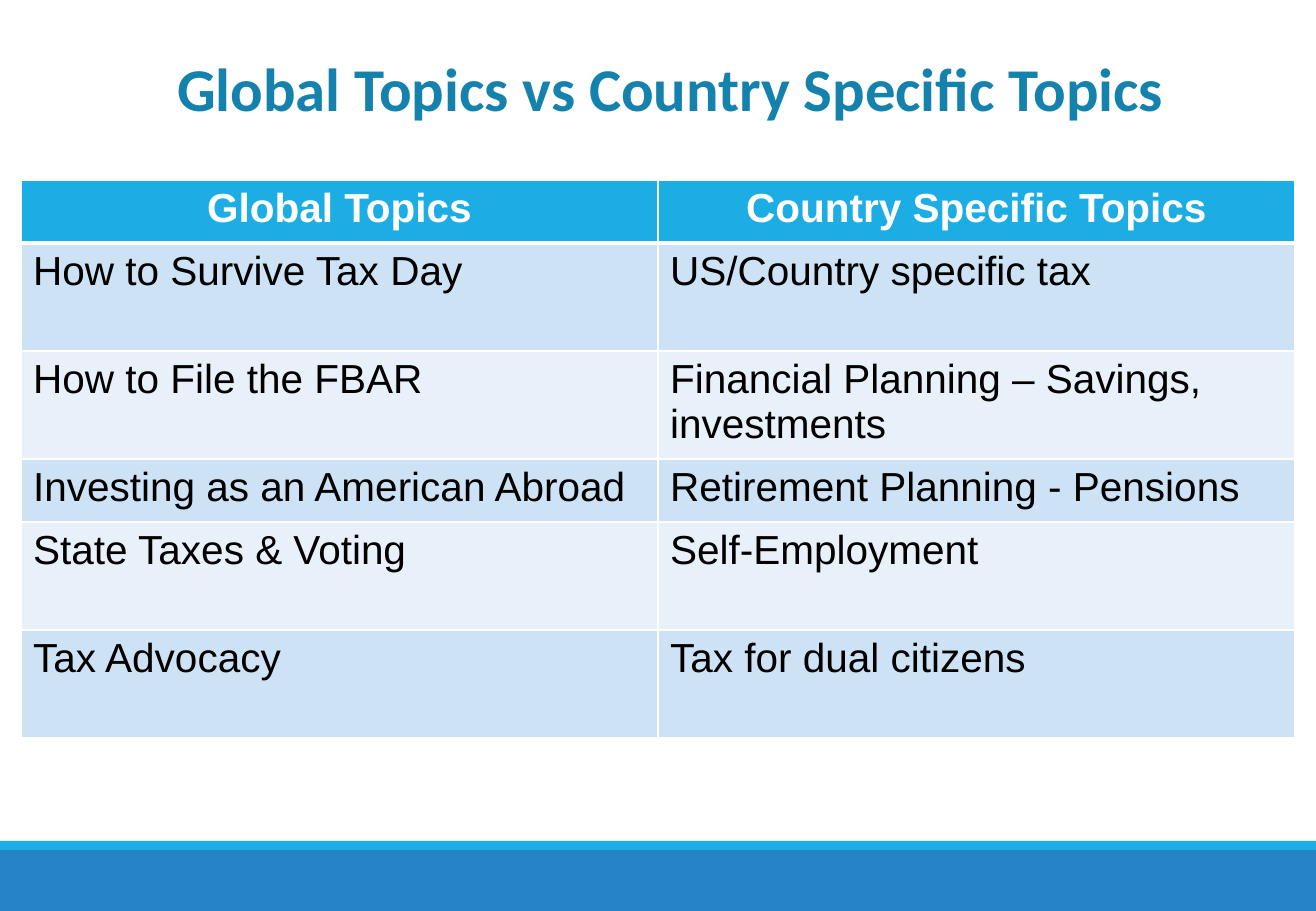
from lxml import etree
from pptx import Presentation
from pptx.dml.color import RGBColor
from pptx.enum.shapes import MSO_SHAPE
from pptx.enum.text import MSO_ANCHOR, MSO_AUTO_SIZE, PP_ALIGN
from pptx.oxml.ns import qn
from pptx.util import Emu, Pt

RECTANGLE = MSO_SHAPE.RECTANGLE
LEFT, CENTER = PP_ALIGN.LEFT, PP_ALIGN.CENTER
TOP = MSO_ANCHOR.TOP
NO_AUTOFIT = MSO_AUTO_SIZE.NONE

PX_PER_INCH = 121.5
SLIDE_W, SLIDE_H = 1316, 911
SKY, BLUE, TEAL = "1CADE4", "2683C6", "1482AC"
WHITE, BLACK = "FFFFFF", "000000"
BANDS = ("CDE3F5", "E8F1FA")

TITLE = "Global Topics vs Country Specific Topics"
TOPICS = [
    ("Global Topics", "Country Specific Topics"),
    ("How to Survive Tax Day", "US/Country specific tax"),
    ("How to File the FBAR", "Financial Planning – Savings, investments"),
    ("Investing as an American Abroad", "Retirement Planning - Pensions"),
    ("State Taxes & Voting", "Self-Employment"),
    ("Tax Advocacy", "Tax for dual citizens"),
]
SHORT_ROW, TALL_ROW = 63, 108
SHORT_ROWS = (0, 3)


def px(length):
    return Emu(round(length * 914400 / PX_PER_INCH))


def color(hex_code):
    return RGBColor.from_string(hex_code)


def style(paragraph, font_name, size, hex_code, bold, align):
    paragraph.alignment = align
    font = paragraph.font
    font.name, font.size, font.bold = font_name, Pt(size), bold
    font.color.rgb = color(hex_code)


def add_footer(slide, left, top, width, height):
    # Thin accent strip above a deep band
    accent = 9
    strips = ((top, accent, SKY), (top + accent, height - accent, BLUE))
    for strip_top, strip_height, fill in strips:
        strip = slide.shapes.add_shape(
            RECTANGLE, px(left), px(strip_top), px(width), px(strip_height))
        strip.shadow.inherit = False
        strip.fill.solid()
        strip.fill.fore_color.rgb = color(fill)
        strip.line.fill.background()


def add_title(slide, left, top, width, height):
    title = slide.shapes.title
    title.left, title.top = px(left), px(top)
    title.width, title.height = px(width), px(height)
    frame = title.text_frame
    frame.text = TITLE
    frame.word_wrap = False
    frame.auto_size = NO_AUTOFIT
    frame.vertical_anchor = TOP
    style(frame.paragraphs[0], "Calibri", 36, TEAL, True, LEFT)


def add_borders(cell, widths):
    properties = cell._tc.get_or_add_tcPr()
    for side, width in widths.items():
        line = etree.SubElement(properties, qn(f"a:ln{side}"), w=str(Pt(width)))
        fill = etree.SubElement(line, qn("a:solidFill"))
        etree.SubElement(fill, qn("a:srgbClr"), val=WHITE)


def add_topics_table(slide, left, top, width):
    heights = [SHORT_ROW if row in SHORT_ROWS else TALL_ROW
               for row in range(len(TOPICS))]
    table = slide.shapes.add_table(
        len(TOPICS), 2, px(left), px(top), px(width), px(sum(heights))).table
    for column in table.columns:
        column.width = px(width / 2)
    for row, (topics, height) in enumerate(zip(TOPICS, heights)):
        table.rows[row].height = px(height)
        header = row == 0
        for column, topic in enumerate(topics):
            cell = table.cell(row, column)
            add_borders(cell, {"L": 1, "R": 1, "T": 3 if row == 1 else 1,
                               "B": 3 if header else 1})
            cell.fill.solid()
            cell.fill.fore_color.rgb = color(
                SKY if header else BANDS[(row - 1) % 2])
            cell.text = topic
            style(cell.text_frame.paragraphs[0], "Arial", 24,
                  WHITE if header else BLACK, header,
                  CENTER if header else LEFT)


def main():
    deck = Presentation()
    deck.slide_width, deck.slide_height = px(SLIDE_W), px(SLIDE_H)
    slide = deck.slides.add_slide(deck.slide_layouts[5])
    add_footer(slide, 0, 841, SLIDE_W, 70)
    add_title(slide, 165, 45, 1023, 86)
    add_topics_table(slide, 21, 180, 1274)
    deck.save("out.pptx")


if __name__ == "__main__":
    main()
